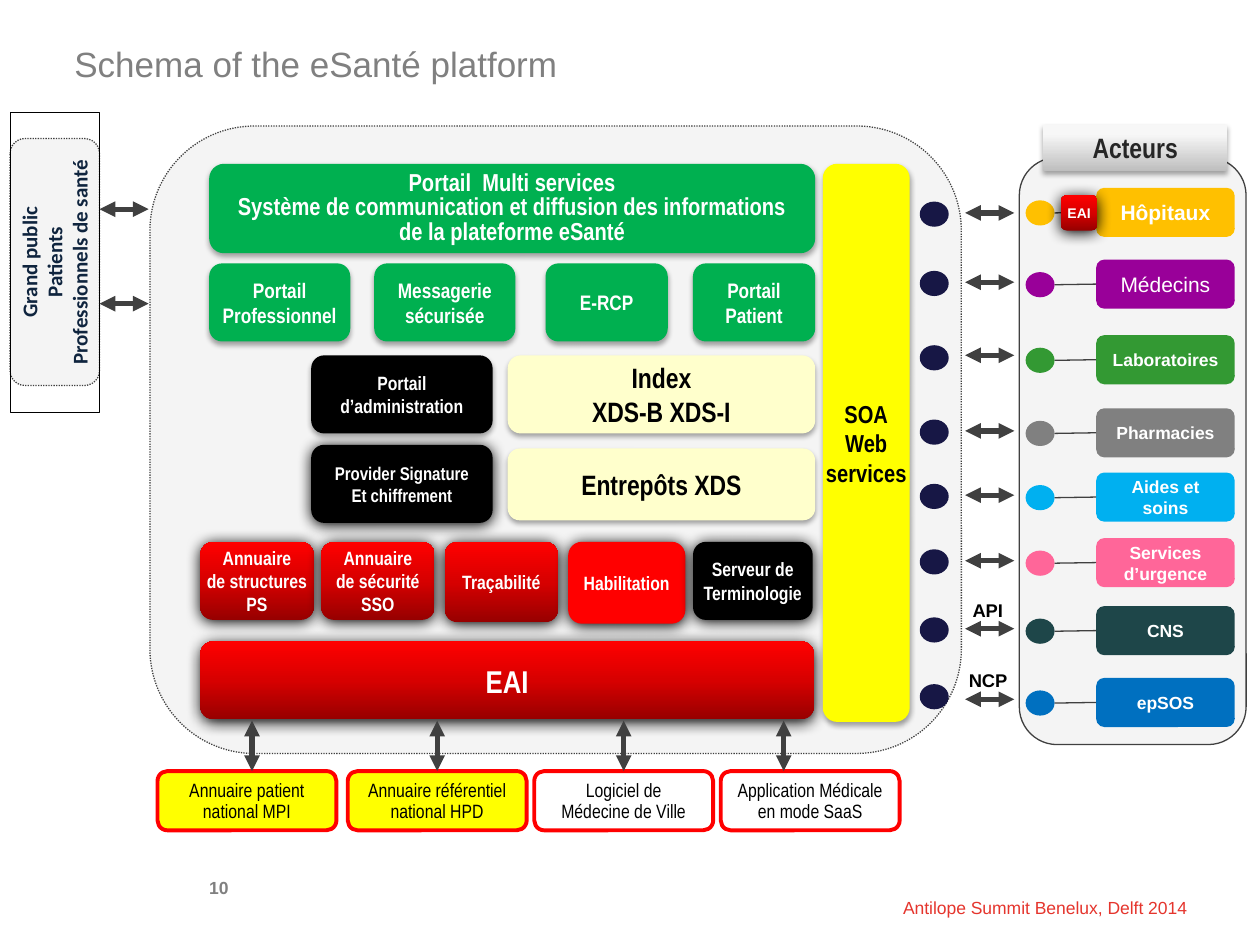
from lxml import etree
from pptx import Presentation
from pptx.dml.color import RGBColor
from pptx.enum.dml import MSO_LINE
from pptx.enum.shapes import MSO_CONNECTOR, MSO_SHAPE as SHAPE
from pptx.enum.text import MSO_ANCHOR as ANCHOR, PP_ALIGN as ALIGN
from pptx.oxml.ns import qn
from pptx.util import Inches, Pt

WHITE, BLACK = RGBColor(255, 255, 255), RGBColor(0, 0, 0)
DARK, GREY = RGBColor(0x40, 0x40, 0x40), RGBColor(0x80, 0x80, 0x80)
PANEL, INK = RGBColor(0xF2, 0xF2, 0xF2), RGBColor(0x26, 0x26, 0x26)
RED, BRICK = RGBColor(255, 0, 0), RGBColor(0xE5, 0x35, 0x2D)
YELLOW, CREAM = RGBColor(255, 255, 0), RGBColor(255, 255, 0xCC)
GREEN, LEAF = RGBColor(0, 0xB0, 0x50), RGBColor(0x33, 0x99, 0x33)
NAVY, MIDNIGHT = RGBColor(0x17, 0x17, 0x45), RGBColor(0x0F, 0x24, 0x3E)
ORANGE, PURPLE = RGBColor(255, 0xC0, 0), RGBColor(0x99, 0, 0x99)
SKY, PINK = RGBColor(0, 0xB0, 0xF0), RGBColor(255, 0x66, 0x99)
TEAL, BLUE = RGBColor(0x1E, 0x46, 0x49), RGBColor(0, 0x70, 0xC0)
RED_FADE = [(0, RGBColor(0x97, 0, 0)), (50, RGBColor(0xD7, 0, 0)), (100, RED)]
GREY_FADE = [(0, RGBColor(0xBE, 0xBE, 0xBE)), (80, RGBColor(0xF7, 0xF7, 0xF7)),
             (100, RGBColor(0xF8, 0xF8, 0xF8))]
SOFT, GLOW = (35, 3.1, 1.8), (100, 8.5, 1)  # opacity %, blur pt, distance pt
NARROW = "Arial Narrow"


def child(parent, tag, **attrs):
    return etree.SubElement(parent, qn(tag), {k: str(v) for k, v in attrs.items()})


def paint(sp, fill, alpha=None):
    """Fill with a colour, a list of gradient stops, or nothing."""
    if fill is None:
        sp.fill.background()
    elif isinstance(fill, list):
        sp.fill.gradient()
        sp.fill.gradient_angle = 90
        stops = sp._element.spPr.find(".//" + qn("a:gsLst"))
        for old in list(stops):
            stops.remove(old)
        for pos, color in fill:
            child(child(stops, "a:gs", pos=pos * 1000), "a:srgbClr", val=color)
    else:
        sp.fill.solid()
        sp.fill.fore_color.rgb = fill
        if alpha:
            clr = sp._element.spPr.find(".//" + qn("a:srgbClr"))
            child(clr, "a:alpha", val=alpha * 1000)


def shape(slide, kind, box, fill, line=None, width=0.75, dash=None, alpha=None, shadow=None):
    sp = slide.shapes.add_shape(kind, *map(Inches, box))
    paint(sp, fill, alpha)
    if line is None:
        sp.line.fill.background()
    else:
        sp.line.color.rgb = line
        sp.line.width = Pt(width)
        sp.line.dash_style = dash
    sp.shadow.inherit = False
    if shadow:
        opacity, blur, dist = shadow
        effects = sp._element.spPr.find(qn("a:effectLst"))
        outer = child(effects, "a:outerShdw", blurRad=Pt(blur), dist=Pt(dist),
                      dir=5400000, rotWithShape=0)
        child(child(outer, "a:srgbClr", val=BLACK), "a:alpha", val=opacity * 1000)
    return sp


def write(sp, lines, size, color, font=NARROW, bold=True, align=ALIGN.CENTER,
          anchor=ANCHOR.MIDDLE, wrap=True, spacing=None, insets=None):
    tf = sp.text_frame
    tf.word_wrap = wrap
    tf.vertical_anchor = anchor
    if insets:
        tf.margin_left = tf.margin_right = Inches(insets[0])
        tf.margin_top = tf.margin_bottom = Inches(insets[1])
    for i, line in enumerate(lines):
        p = tf.add_paragraph() if i else tf.paragraphs[0]
        p.alignment = align
        if spacing:
            p.line_spacing = Pt(spacing)
        r = p.add_run()
        r.text = line
        r.font.name, r.font.size, r.font.bold = font, Pt(size), bold
        r.font.color.rgb = color


def label(slide, box, text, size, color, **style):
    tb = slide.shapes.add_textbox(*map(Inches, box))
    write(tb, [text], size, color, font="Arial", **style)


def connector(slide, x1, y1, x2, y2, width=3, arrows=True):
    cn = slide.shapes.add_connector(MSO_CONNECTOR.STRAIGHT, *map(Inches, (x1, y1, x2, y2)))
    cn.line.color.rgb = DARK
    cn.line.width = Pt(width)
    if arrows:
        ln = cn.line._get_or_add_ln()
        child(ln, "a:headEnd", type="triangle")
        child(ln, "a:tailEnd", type="triangle")
    child(cn._element.spPr, "a:effectLst")
    return cn


def module(slide, box, lines, size, fill, color=WHITE, shadow=SOFT, **style):
    sp = shape(slide, SHAPE.FLOWCHART_ALTERNATE_PROCESS, box, fill, shadow=shadow)
    write(sp, lines, size, color, wrap=False, **style)


def platform(slide, x, y, w, h):
    shape(slide, SHAPE.ROUNDED_RECTANGLE, (x, y, w, h), PANEL, DARK,
          dash=MSO_LINE.ROUND_DOT, alpha=80)
    module(slide, (x + 0.47, y + 0.3, 4.81, 0.71),
           ["Portail  Multi services", "Système de communication et diffusion des informations",
            "de la plateforme eSanté"], 14, GREEN, spacing=14)
    for dx, bw, lines in [(0.47, 1.12, ["Portail", "Professionnel"]),
                          (1.78, 1.12, ["Messagerie", "sécurisée"]),
                          (3.14, 0.97, ["E-RCP"]), (4.31, 0.97, ["Portail", "Patient"])]:
        module(slide, (x + dx, y + 1.09, bw, 0.62), lines, 12, GREEN)
    module(slide, (x + 1.28, y + 1.82, 1.44, 0.62), ["Portail", "d’administration"], 11, BLACK)
    module(slide, (x + 1.28, y + 2.53, 1.44, 0.62), ["Provider Signature", "Et chiffrement"],
           10.5, BLACK, shadow=GLOW)
    module(slide, (x + 2.84, y + 1.82, 2.44, 0.62), ["Index", "XDS-B XDS-I"], 16, CREAM, BLACK)
    module(slide, (x + 2.84, y + 2.56, 2.44, 0.57), ["Entrepôts XDS"], 16, CREAM, BLACK)
    for dx, bw, bh, fill, lines in [
            (0.4, 0.9, 0.62, RED_FADE, ["Annuaire", "de structures", "PS"]),
            (1.36, 0.9, 0.62, RED_FADE, ["Annuaire", "de sécurité", "SSO"]),
            (2.34, 0.9, 0.64, RED_FADE, ["Traçabilité"]),
            (3.32, 0.93, 0.65, RED, ["Habilitation"]),
            (4.31, 0.95, 0.62, BLACK, ["Serveur de", "Terminologie"])]:
        module(slide, (x + dx, y + 3.3, bw, bh), lines, 11, fill, shadow=GLOW)
    module(slide, (x + 0.4, y + 4.09, 4.87, 0.62), ["EAI"], 18, RED_FADE, shadow=GLOW)
    module(slide, (x + 5.34, y + 0.3, 0.69, 4.43), ["SOA", "Web", "services"], 14, YELLOW, BLACK)


def external_systems(slide, y):
    """Row of outside systems; arrow_x of None means the middle of the box."""
    for x, fill, arrow_x, lines in [
            (1.25, YELLOW, 2, ["Annuaire patient", "national MPI"]),
            (2.76, YELLOW, None, ["Annuaire référentiel national HPD"]),
            (4.24, WHITE, None, ["Logiciel de Médecine de Ville"]),
            (5.72, WHITE, 6.22, ["Application Médicale en mode SaaS"])]:
        sp = shape(slide, SHAPE.ROUNDED_RECTANGLE, (x, y, 1.42, 0.47), fill, RED, 2.25)
        write(sp, lines, 11, BLACK, bold=False, anchor=ANCHOR.TOP, spacing=12)
        end = arrow_x or x + 0.71
        arrow = connector(slide, end, y, end, y - 0.4)
        if arrow_x is None:
            arrow.begin_connect(sp, 0)


def actors(slide, x, y, w, h):
    shape(slide, SHAPE.ROUNDED_RECTANGLE, (x, y, w, h), PANEL, DARK, alpha=80)
    head = shape(slide, SHAPE.RECTANGLE, (x + 0.19, y - 0.26, 1.46, 0.37), GREY_FADE, shadow=SOFT)
    write(head, ["Acteurs"], 16, INK, anchor=ANCHOR.TOP)
    for mid, arrow_y, service_y, color, name, size, bold in [
            (1.69, 1.69, 1.7, ORANGE, "Hôpitaux", 12, True),
            (2.26, 2.24, 2.25, PURPLE, "Médecins", 12, False),
            (2.86, 2.82, 2.84, LEAF, "Laboratoires", 10, True),
            (3.44, 3.42, 3.43, GREY, "Pharmacies", 10, True),
            (3.95, 3.93, 3.94, SKY, "Aides et soins", 10, True),
            (4.47, 4.45, 4.46, PINK, "Services d’urgence", 10, True),
            (5.01, 4.99, 5, TEAL, "CNS", 10, True),
            (5.58, 5.55, 5.53, BLUE, "epSOS", 10, True)]:
        shape(slide, SHAPE.OVAL, (x + 0.05, mid - 0.1, 0.23, 0.2), color)
        sp = shape(slide, SHAPE.ROUNDED_RECTANGLE, (x + 0.61, mid - 0.2, 1.1, 0.39), color)
        write(sp, [name], size, WHITE, font="Arial", bold=bold)
        link = connector(slide, x + 0.61, mid, x + 0.28, mid, 0.75, arrows=False)
        link.begin_connect(sp, 1)
        connector(slide, x - 0.43, arrow_y, x - 0.04, arrow_y)
        shape(slide, SHAPE.OVAL, (x - 0.79, service_y - 0.1, 0.23, 0.2), NAVY)
    module(slide, (x + 0.33, y + 0.3, 0.29, 0.28), ["EAI"], 8, RED_FADE, shadow=GLOW, font="Arial")
    for dx, dy, text in [(-0.47, 3.46, "API"), (-0.5, 4.01, "NCP")]:
        label(slide, (x + dx, y + dy, 0.59, 0.28), text, 10.5, BLACK,
              align=ALIGN.LEFT, anchor=ANCHOR.TOP)


def users(slide, x, y, w, h):
    shape(slide, SHAPE.ROUNDED_RECTANGLE, (x, y + 0.21, w, 1.96), PANEL, DARK,
          dash=MSO_LINE.ROUND_DOT, alpha=80)
    sp = shape(slide, SHAPE.RECTANGLE, (x + (w - h) / 2, y + (h - w) / 2, h, w), None, BLACK, 0.5)
    sp.rotation = 270
    write(sp, ["Grand public", "Patients", "Professionnels de santé"], 12, MIDNIGHT,
          font="Calibri", anchor=ANCHOR.TOP)
    for arrow_y in (1.66, 2.41):
        connector(slide, x + w, arrow_y, x + w + 0.39, arrow_y)


def main():
    prs = Presentation()
    prs.slide_width, prs.slide_height = Inches(10), Inches(7.5)
    slide = prs.slides.add_slide(prs.slide_layouts[6])
    label(slide, (0, 0, 10, 0.84), "Schema of the eSanté platform", 20, GREY, bold=False,
          align=ALIGN.LEFT, anchor=ANCHOR.BOTTOM, insets=(0.59, 0.2))
    label(slide, (1.46, 6.74, 1.73, 0.61), "10", 10, GREY, align=ALIGN.LEFT, insets=(0.2, 0))
    label(slide, (6.1, 7.08, 3.91, 0.42), "Antilope Summit Benelux, Delft 2014", 10, BRICK,
          bold=False, align=ALIGN.RIGHT, anchor=ANCHOR.TOP, insets=(0.59, 0.04))
    platform(slide, 1.19, 1, 6.44, 4.98)
    external_systems(slide, 6.12)
    actors(slide, 8.09, 1.25, 1.8, 4.66)
    users(slide, 0.08, 0.89, 0.71, 2.38)
    prs.save("out.pptx")


if __name__ == "__main__":
    main()
